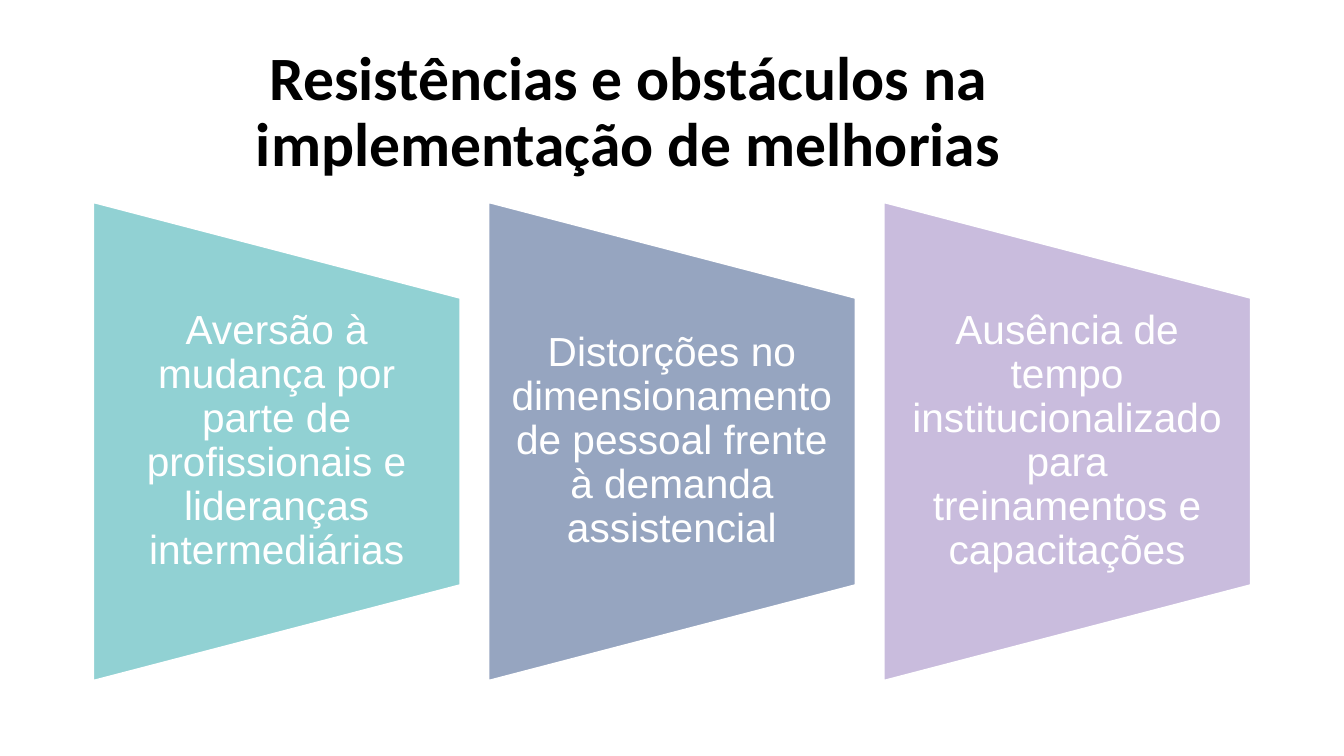
from dataclasses import dataclass
from pptx import Presentation
from pptx.dml.color import RGBColor
from pptx.enum.shapes import MSO_SHAPE
from pptx.enum.text import MSO_ANCHOR, MSO_AUTO_SIZE, PP_ALIGN
from pptx.util import Inches, Pt


@dataclass(frozen=True)
class Theme:
    ink: str = "000000"
    white: str = "FFFFFF"
    teal: str = "91D1D3"
    blue: str = "96A5C0"
    lilac: str = "C9BCDD"
    head: str = "Calibri"
    body: str = "Arial"
    big: int = 44
    mid: int = 29


def write(frame, text, *, font, size, color, bold=False, side=0.1, edge=0.05):
    frame.word_wrap = True
    frame.auto_size = MSO_AUTO_SIZE.NONE
    frame.vertical_anchor = MSO_ANCHOR.MIDDLE
    frame.margin_left = frame.margin_right = Inches(side)
    frame.margin_top = frame.margin_bottom = Inches(edge)
    para = frame.paragraphs[0]
    para.alignment = PP_ALIGN.CENTER
    para.line_spacing = 0.9
    run = para.add_run()
    run.text = text
    run.font.name = font
    run.font.size = Pt(size)
    run.font.bold = bold
    run.font.color.rgb = RGBColor.from_string(color)


class Deck:
    def __init__(self, theme):
        self.theme = theme
        self.file = Presentation()
        self.file.slide_width = Inches(13.33)
        self.file.slide_height = Inches(7.5)
        # Title Only layout
        self.slide = self.file.slides.add_slide(self.file.slide_layouts[5])

    def title(self, text, left, top, width, height):
        box = self.slide.shapes.title
        box.left, box.top = Inches(left), Inches(top)
        box.width, box.height = Inches(width), Inches(height)
        write(box.text_frame, text, font=self.theme.head,
              size=self.theme.big, color=self.theme.ink, bold=True)

    def panel(self, left, top, width, height, color):
        # Turned a quarter left about its centre, so the sides swap
        shift = (height - width) / 2
        shape = self.slide.shapes.add_shape(
            MSO_SHAPE.FLOWCHART_MANUAL_OPERATION, Inches(left - shift),
            Inches(top + shift), Inches(height), Inches(width))
        shape.rotation = 270
        shape.shadow.inherit = False
        shape.fill.solid()
        shape.fill.fore_color.rgb = RGBColor.from_string(color)
        shape.line.color.rgb = RGBColor.from_string(self.theme.white)
        shape.line.width = Pt(2)

    def label(self, text, left, top, width, height):
        box = self.slide.shapes.add_textbox(
            Inches(left), Inches(top), Inches(width), Inches(height))
        write(box.text_frame, text, font=self.theme.body, size=self.theme.mid,
              color=self.theme.white, side=0.2, edge=0)


def main():
    theme = Theme()
    deck = Deck(theme)

    # Heading
    deck.title("Resistências e obstáculos na implementação de melhorias",
               0.92, 0.4, 10.63, 1.45)

    # Three obstacles in a row
    items = [
        ("Aversão à mudança por parte de profissionais e lideranças "
         "intermediárias", theme.teal),
        ("Distorções no dimensionamento de pessoal frente à demanda "
         "assistencial", theme.blue),
        ("Ausência de tempo institucionalizado para treinamentos e "
         "capacitações", theme.lilac),
    ]
    first, step, width = 0.92, 3.92, 3.65
    top, height, inner = 2.0, 4.76, 2.86
    for i, (text, color) in enumerate(items):
        left = first + i * step
        deck.panel(left, top, width, height, color)
        deck.label(text, left, top + (height - inner) / 2, width, inner)

    deck.file.save("out.pptx")


if __name__ == "__main__":
    main()
